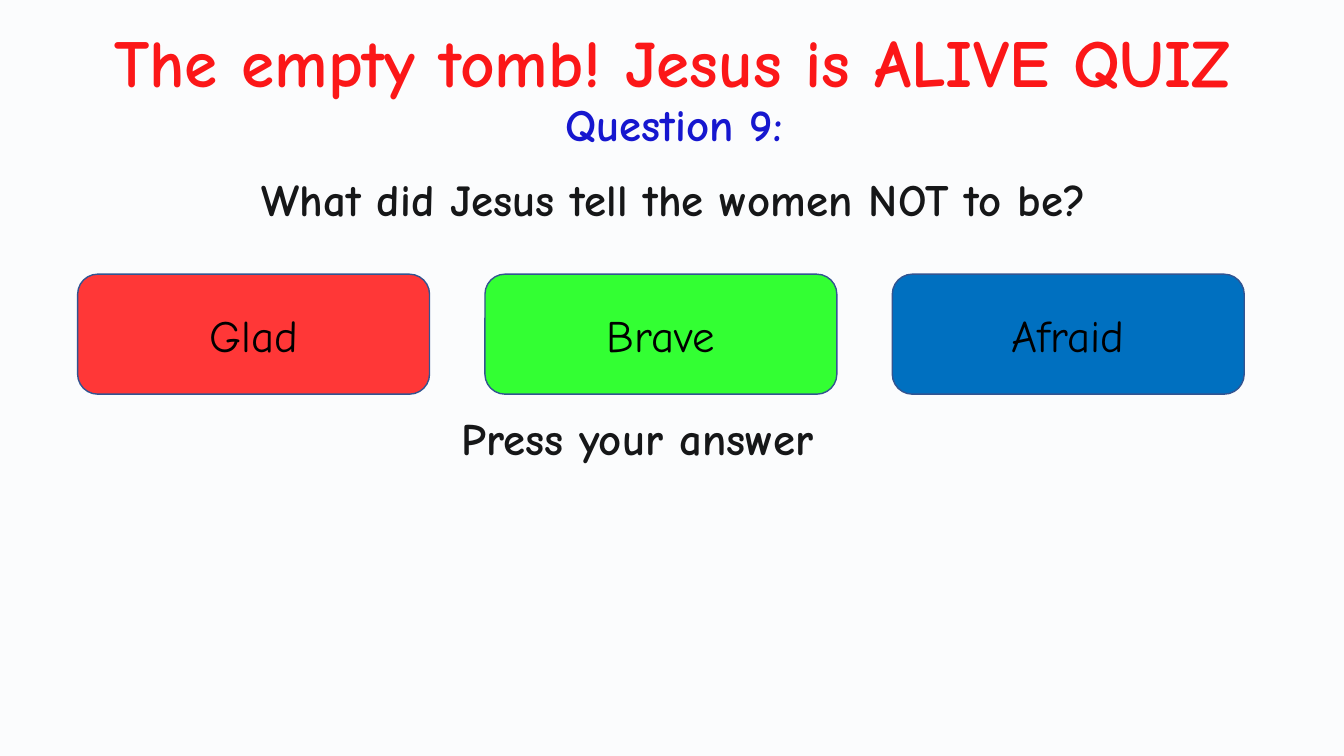
from pptx import Presentation
from pptx.dml.color import RGBColor
from pptx.enum.shapes import MSO_SHAPE as SHAPE
from pptx.enum.text import MSO_ANCHOR as ANCHOR, MSO_AUTO_SIZE as AUTO, PP_ALIGN as ALIGN
from pptx.oxml.ns import qn
from pptx.util import Pt
from lxml import etree

PX = 9144
FONT = "Comic Neue"
RED = RGBColor(0xFF, 0x00, 0x00)
NAVY = RGBColor(0x00, 0x00, 0xCC)
BLACK = RGBColor(0x00, 0x00, 0x00)
TINT = RGBColor(0xDA, 0xE3, 0xF3)
EDGE = RGBColor(0x32, 0x54, 0x91)
ANSWERS = [
    ("Glad", RGBColor(0xFF, 0x37, 0x37)),
    ("Brave", RGBColor(0x33, 0xFF, 0x33)),
    ("Afraid", RGBColor(0x00, 0x70, 0xC0)),
]


def emu(*lengths):
    return [n * PX for n in lengths]


def apply(obj, values):
    for name, value in values.items():
        setattr(obj, name, value)


def write(sp, text, color=BLACK, size=32, bold=True, anchor=ANCHOR.TOP, **para):
    tf = sp.text_frame
    apply(tf, {"word_wrap": True, "auto_size": AUTO.NONE, "vertical_anchor": anchor})
    p = tf.paragraphs[0]
    apply(p, {"alignment": ALIGN.CENTER, "line_spacing": 1.0, "space_before": Pt(0), **para})
    r = p.add_run()
    r.text = text
    apply(r.font, {"name": FONT, "size": Pt(size), "bold": bold})
    r.font.color.rgb = color


def add_title(slide, box, text):
    sp = slide.shapes.title
    apply(sp, dict(zip(("left", "top", "width", "height"), emu(*box))))
    write(sp, text, RED, 48)


def add_text(slide, box, text, **fmt):
    write(slide.shapes.add_textbox(*emu(*box)), text, **fmt)


def add_panel(slide, box, kind, color):
    sp = slide.shapes.add_shape(kind, *emu(*box))
    sp.shadow.inherit = False
    sp.fill.solid()
    sp.fill.fore_color.rgb = color
    sp.line.color.rgb = EDGE
    sp.line.width = Pt(1)
    return sp


def add_tint(slide, box):
    sp = add_panel(slide, box, SHAPE.RECTANGLE, TINT)
    clr = sp.fill._xPr.find(qn("a:solidFill"))[0]
    etree.SubElement(clr, qn("a:alpha"), val="10000")


def add_answers(slide, box, gap):
    left, top, width, height = box
    w = (width - gap * (len(ANSWERS) - 1)) // len(ANSWERS)
    for i, (text, color) in enumerate(ANSWERS):
        sp = add_panel(slide, (left + i * (w + gap), top, w, height),
                       SHAPE.ROUNDED_RECTANGLE, color)
        write(sp, text, bold=False, anchor=ANCHOR.MIDDLE)


def add_quiz_slide(prs):
    slide = prs.slides.add_slide(prs.slide_layouts[5])
    add_title(slide, (-3, 15, 1340, 91), "The empty tomb! Jesus is ALIVE QUIZ")
    add_text(slide, (90, 167, 1157, 119), "What did Jesus tell the women NOT to be?",
             line_spacing=Pt(37), space_before=Pt(10))
    add_text(slide, (448, 409, 673, 72), "Press your answer",
             alignment=ALIGN.LEFT, line_spacing=0.9, space_before=Pt(7.5))
    add_text(slide, (448, 91, 441, 64), "Question 9:", color=NAVY)
    add_tint(slide, (-41, -61, 1419, 873))
    add_answers(slide, (77, 272, 1157, 119), 55)


def main():
    prs = Presentation()
    prs.slide_width, prs.slide_height = emu(1333, 750)
    add_quiz_slide(prs)
    prs.save("out.pptx")


if __name__ == "__main__":
    main()
